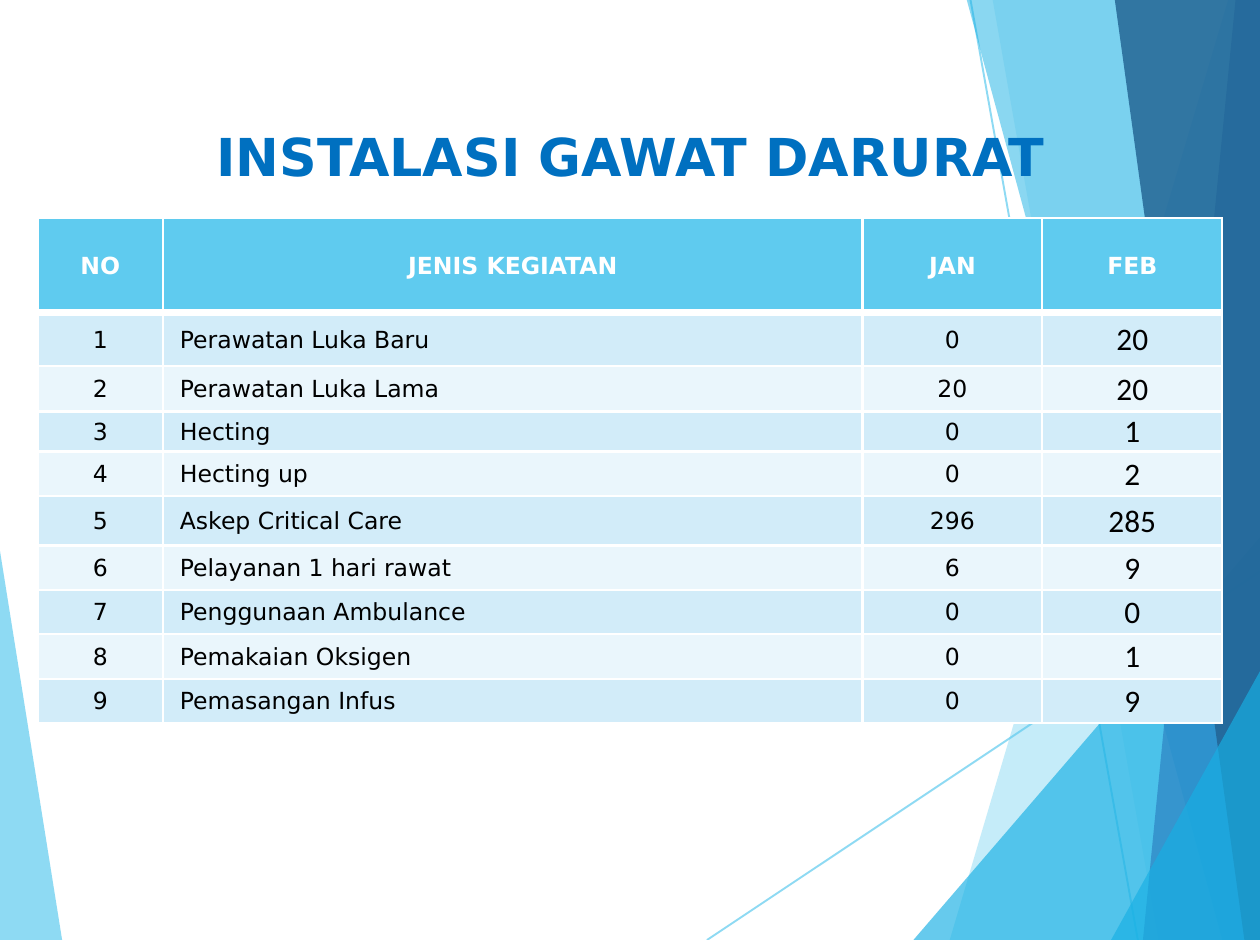
from dataclasses import dataclass

from lxml import etree
from pptx import Presentation
from pptx.dml.color import RGBColor
from pptx.enum.shapes import MSO_CONNECTOR
from pptx.enum.text import MSO_ANCHOR, PP_ALIGN
from pptx.oxml.ns import qn
from pptx.util import Cm, Pt

STRAIGHT = MSO_CONNECTOR.STRAIGHT
CENTER, LEFT = PP_ALIGN.CENTER, PP_ALIGN.LEFT
MIDDLE, BOTTOM = MSO_ANCHOR.MIDDLE, MSO_ANCHOR.BOTTOM


@dataclass(frozen=True)
class Theme:
    title: str = "0070C0"
    sky: str = "5FCBEF"
    cyan: str = "17B0E4"
    blue: str = "2E83C3"
    navy: str = "226292"
    odd_row: str = "D2ECF9"
    even_row: str = "EAF6FC"
    white: str = "FFFFFF"
    black: str = "000000"
    font: str = "DejaVu Sans"
    number_font: str = "Calibri"
    title_size: float = 20
    table_size: float = 9
    number_size: float = 12
    thin: float = 1
    thick: float = 3
    hairline: float = 0.75


THEME = Theme()
WIDTH, HEIGHT = 17.02, 12.7

# Colour, opacity in percent, corner points in cm
FACETS = [
    (THEME.sky, 36, [(16.59, 0), (12.83, HEIGHT), (WIDTH, HEIGHT), (WIDTH, 0)]),
    (THEME.sky, 20, [(13.41, 0), (15.65, HEIGHT), (WIDTH, HEIGHT), (WIDTH, 0)]),
    (THEME.cyan, 66, [(12.34, HEIGHT), (WIDTH, 7.26), (WIDTH, HEIGHT)]),
    (THEME.cyan, 50, [(13.06, 0), (16.51, HEIGHT), (WIDTH, HEIGHT), (WIDTH, 0)]),
    (THEME.blue, 70, [(16.69, 0), (15.44, HEIGHT), (WIDTH, HEIGHT), (WIDTH, 0)]),
    (THEME.navy, 82, [(15.06, 0), (16.81, HEIGHT), (WIDTH, HEIGHT), (WIDTH, 0)]),
    (THEME.cyan, 66, [(15.01, HEIGHT), (WIDTH, 9.07), (WIDTH, HEIGHT)]),
]
LEFT_WEDGE = (THEME.sky, 70, [(0, 7.44), (0.84, HEIGHT), (0, HEIGHT)])
RAYS = [((9.55, HEIGHT), (WIDTH, 7.72)), ((13.11, 0), (15.37, HEIGHT))]

HEADINGS = ("NO", "JENIS KEGIATAN", "JAN", "FEB")
ACTIVITIES = [
    ("Perawatan Luka Baru", 0, 20),
    ("Perawatan Luka Lama", 20, 20),
    ("Hecting", 0, 1),
    ("Hecting up", 0, 2),
    ("Askep Critical Care", 296, 285),
    ("Pelayanan 1 hari rawat", 6, 9),
    ("Penggunaan Ambulance", 0, 0),
    ("Pemakaian Oksigen", 0, 1),
    ("Pemasangan Infus", 0, 9),
]
COLUMN_WIDTHS = (1.69, 9.45, 2.43, 2.43)
ROW_HEIGHTS = (1.27, 0.73, 0.61, 0.54, 0.6, 0.67, 0.6, 0.6, 0.6, 0.6)


def color(value):
    return RGBColor.from_string(value)


def set_opacity(shape, percent):
    """Apply to the first colour of the shape, be it fill or line."""
    node = shape.element.spPr.find(".//" + qn("a:srgbClr"))
    etree.SubElement(node, qn("a:alpha"), val=str(percent * 1000))


def add_run(paragraph, text, font, size, text_color, bold=False):
    run = paragraph.add_run()
    run.text = text
    run.font.name, run.font.size, run.font.bold = font, Pt(size), bold
    run.font.color.rgb = color(text_color)


def add_facet(group, left, top, fill, opacity, points):
    corners = [(Cm(left + x), Cm(top + y)) for x, y in points]
    builder = group.shapes.build_freeform(*corners[0])
    builder.add_line_segments(corners[1:], close=True)
    shape = builder.convert_to_shape()
    shape.shadow.inherit = False
    shape.fill.solid()
    shape.fill.fore_color.rgb = color(fill)
    shape.line.fill.background()
    set_opacity(shape, opacity)


def add_ray(group, left, top, start, end):
    ray = group.shapes.add_connector(
        STRAIGHT, Cm(left + start[0]), Cm(top + start[1]), Cm(left + end[0]), Cm(top + end[1])
    )
    ray.line.color.rgb = color(THEME.sky)
    ray.line.width = Pt(THEME.hairline)
    set_opacity(ray, 70)
    etree.SubElement(ray.element.spPr, qn("a:effectLst"))


def add_backdrop(slide, left, top):
    group = slide.shapes.add_group_shape()
    add_facet(group, left, top, *LEFT_WEDGE)
    for start, end in RAYS:
        add_ray(group, left, top, start, end)
    for facet in FACETS:
        add_facet(group, left, top, *facet)


def place_title(slide, left, top, width, height, text):
    title = slide.shapes.title
    title.element.getparent().append(title.element)  # in front of the backdrop
    title.left, title.top, title.width, title.height = map(Cm, (left, top, width, height))
    frame = title.text_frame
    frame.word_wrap = True
    frame.vertical_anchor = BOTTOM
    frame.margin_bottom = Cm(0.24)
    paragraph = frame.paragraphs[0]
    paragraph.alignment = CENTER
    add_run(paragraph, text, THEME.font, THEME.title_size, THEME.title, bold=True)


def set_borders(cell, top, bottom):
    properties = cell._tc.get_or_add_tcPr()
    widths = {"lnL": THEME.thin, "lnR": THEME.thin, "lnT": top, "lnB": bottom}
    for tag, width in widths.items():
        line = etree.SubElement(properties, qn("a:" + tag), w=str(Pt(width)))
        fill = etree.SubElement(line, qn("a:solidFill"))
        etree.SubElement(fill, qn("a:srgbClr"), val=THEME.white)


def fill_cell(cell, row, column, text):
    is_header = row == 0
    is_name = column == 1 and not is_header
    set_borders(
        cell,
        top=THEME.thick if row == 1 else THEME.thin,
        bottom=THEME.thick if is_header else THEME.thin,
    )
    cell.fill.solid()
    body_fill = THEME.odd_row if row % 2 else THEME.even_row
    cell.fill.fore_color.rgb = color(THEME.sky if is_header else body_fill)
    cell.vertical_anchor = MIDDLE
    cell.margin_left = Cm(0.23 if is_name else 0.02)
    cell.margin_right = cell.margin_top = Cm(0.02)
    cell.margin_bottom = 0
    paragraph = cell.text_frame.paragraphs[0]
    paragraph.alignment = LEFT if is_name else CENTER
    if is_header:
        add_run(paragraph, text, THEME.font, THEME.table_size, THEME.white, bold=True)
    elif column == 3:
        add_run(paragraph, text, THEME.number_font, THEME.number_size, THEME.black)
    else:
        add_run(paragraph, text, THEME.font, THEME.table_size, THEME.black)


def add_activity_table(slide, left, top, width, height):
    """Share the box out in proportion to the column widths and row heights."""
    rows = [HEADINGS] + [(number, *entry) for number, entry in enumerate(ACTIVITIES, 1)]
    table = slide.shapes.add_table(
        len(rows), len(HEADINGS), Cm(left), Cm(top), Cm(width), Cm(height)
    ).table
    table.horz_banding = False
    for column, share in zip(table.columns, COLUMN_WIDTHS):
        column.width = Cm(width * share / sum(COLUMN_WIDTHS))
    for row, share in zip(table.rows, ROW_HEIGHTS):
        row.height = Cm(height * share / sum(ROW_HEIGHTS))
    for row, values in enumerate(rows):
        for column, value in enumerate(values):
            fill_cell(table.cell(row, column), row, column, str(value))


def main():
    presentation = Presentation()
    presentation.slide_width, presentation.slide_height = Cm(WIDTH), Cm(HEIGHT)
    slide = presentation.slides.add_slide(presentation.slide_layouts.get_by_name("Title Only"))
    add_backdrop(slide, 0, 0)
    place_title(slide, 0.86, 0.66, 15.32, 2.11, "INSTALASI GAWAT DARURAT")
    add_activity_table(slide, 0.51, 2.95, 16, 6.82)
    presentation.save("out.pptx")


if __name__ == "__main__":
    main()
